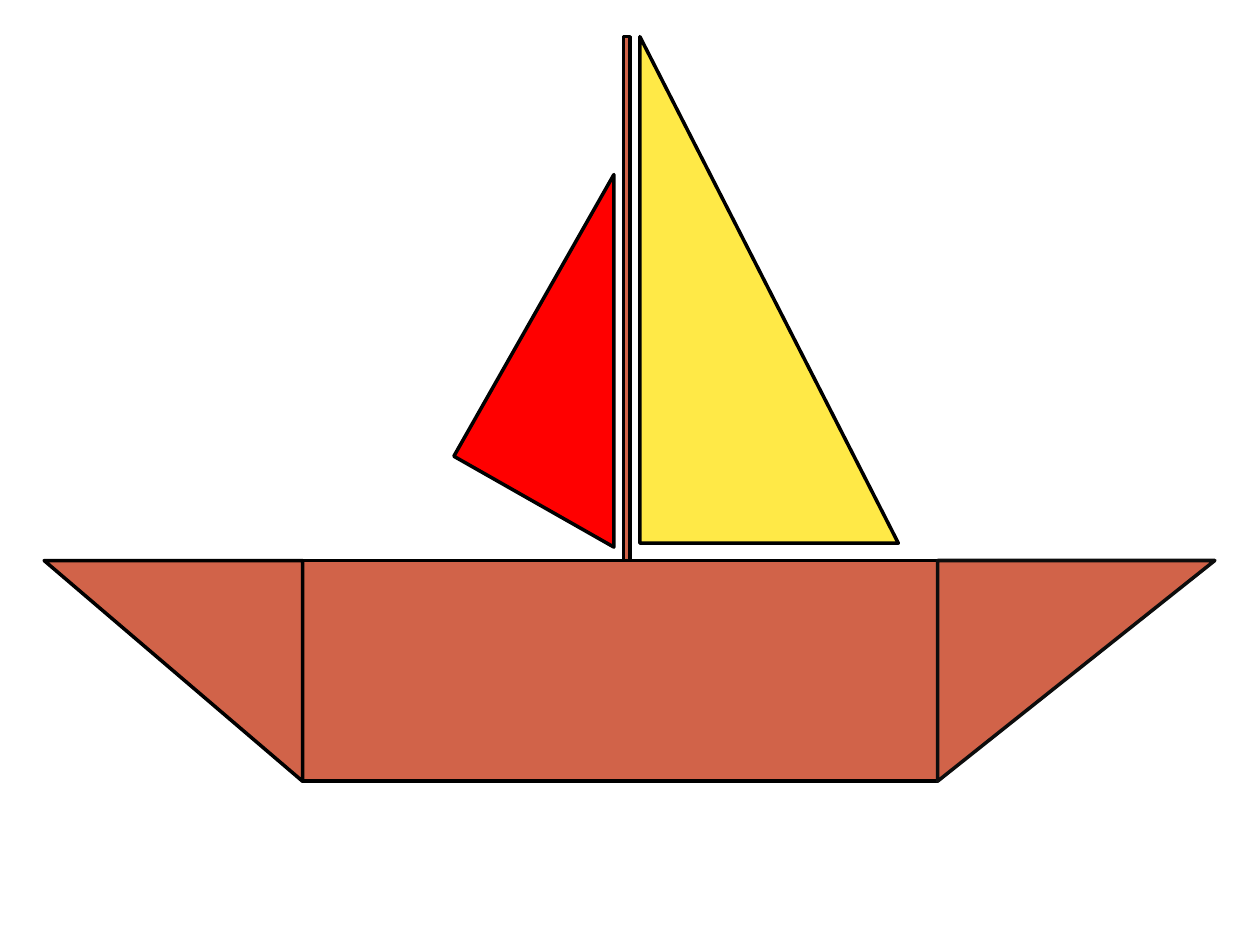
from pptx import Presentation
from pptx import util as u
from pptx.dml.color import RGBColor
from pptx.enum import shapes

WOOD = RGBColor(0xD1, 0x63, 0x49)
YELLOW = RGBColor(0xFF, 0xE9, 0x47)
RED = RGBColor(0xFF, 0x00, 0x00)
BLACK = RGBColor(0x00, 0x00, 0x00)
NEAR_BLACK = RGBColor(0x0D, 0x0D, 0x0D)

RECTANGLE = shapes.MSO_SHAPE.RECTANGLE
TRIANGLE = shapes.MSO_SHAPE.RIGHT_TRIANGLE

HULL_LEFT, DECK, HULL_WIDTH, HULL_HEIGHT = 6.1, 11.3, 12.8, 4.45
STERN_LENGTH, BOW_LENGTH = 5.21, 5.59
MAST_TOP = 0.74


def add_part(slide, kind, left, top, width, height, color, rotation=0, outline=BLACK):
    part = slide.shapes.add_shape(
        kind, u.Cm(left), u.Cm(top), u.Cm(width), u.Cm(height))
    part.rotation = rotation
    part.shadow.inherit = False
    part.fill.solid()
    part.fill.fore_color.rgb = color
    part.line.color.rgb = outline
    part.line.width = u.Pt(2)


def add_hull(slide):
    add_part(slide, RECTANGLE, HULL_LEFT, DECK, HULL_WIDTH, HULL_HEIGHT, WOOD)
    turn_shift = (BOW_LENGTH - HULL_HEIGHT) / 2
    add_part(slide, TRIANGLE, HULL_LEFT + HULL_WIDTH + turn_shift, DECK - turn_shift,
             HULL_HEIGHT, BOW_LENGTH, WOOD, 90, NEAR_BLACK)
    add_part(slide, TRIANGLE, HULL_LEFT - STERN_LENGTH, DECK,
             STERN_LENGTH, HULL_HEIGHT, WOOD, 180)


def add_rigging(slide):
    add_part(slide, TRIANGLE, 12.9, MAST_TOP, 5.21, 10.21, YELLOW)
    add_part(slide, RECTANGLE, 12.57, MAST_TOP, 0.13, DECK - MAST_TOP, WOOD)
    add_part(slide, TRIANGLE, 10.52, 4.01, 3.71, 6.53, RED, 29.6)


def main():
    deck = Presentation()
    deck.slide_width, deck.slide_height = u.Cm(25.4), u.Cm(19.05)
    slide = deck.slides.add_slide(deck.slide_layouts[6])
    add_hull(slide)
    add_rigging(slide)
    deck.save("out.pptx")


if __name__ == "__main__":
    main()
